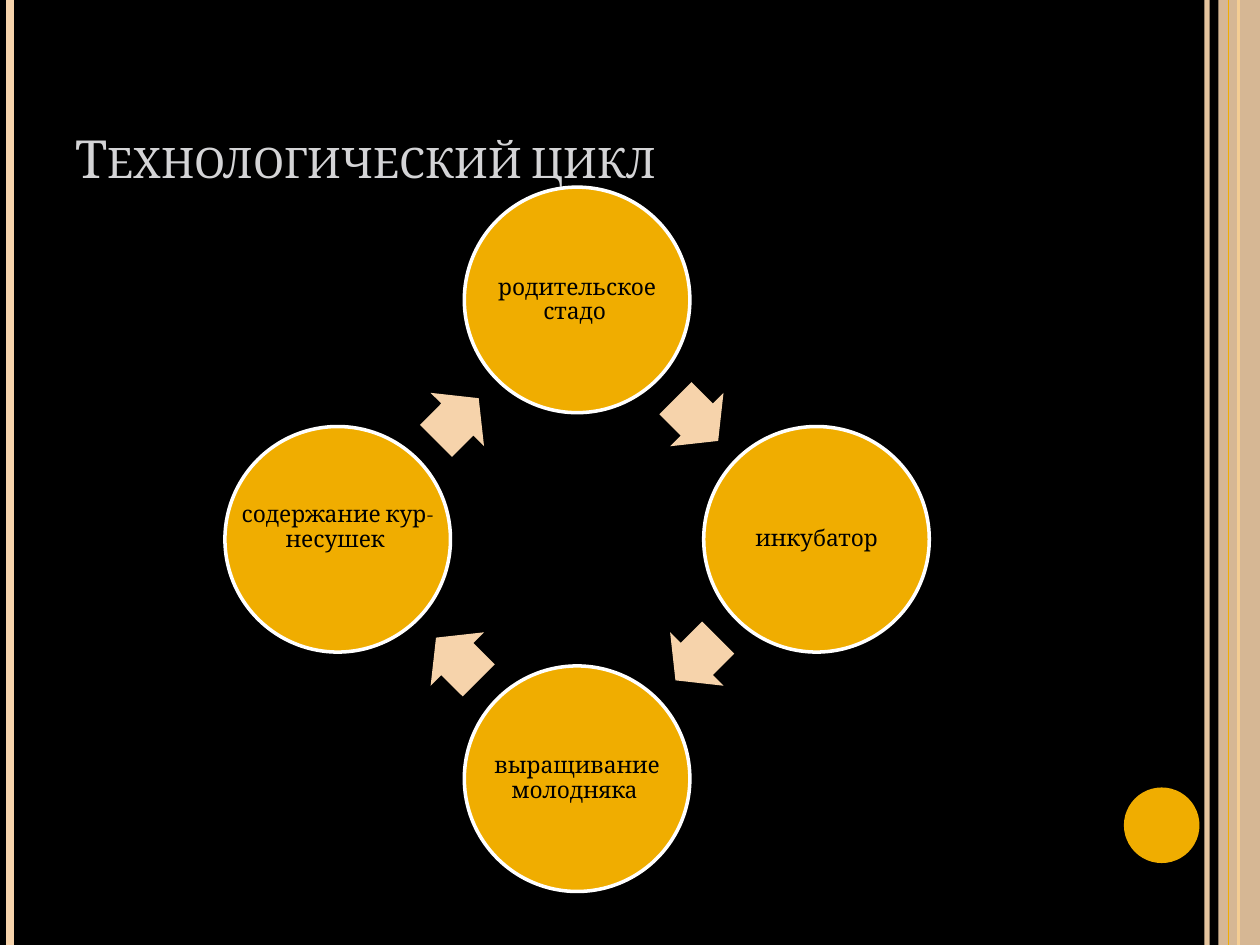
import math

import pptx
import pptx.dml.color
import pptx.enum.shapes
import pptx.enum.text
import pptx.oxml.ns
import pptx.util
from lxml import etree

Inches = pptx.util.Inches
Pt = pptx.util.Pt
Shape = pptx.enum.shapes.MSO_SHAPE
Anchor = pptx.enum.text.MSO_ANCHOR
Align = pptx.enum.text.PP_ALIGN

GOLD, PEACH, WHITE, BLACK, SILVER = "F0AD00", "F6D3AB", "FFFFFF", "000000", "D4D4D6"
HEADING = "Технологический цикл"
STAGES = [
    ("родительское стадо ", 0.02),
    ("инкубатор", 0.02),
    ("выращивание молодняка ", 0.02),
    ("содержание кур-несушек ", 0.21),
]
STRIPES = [
    (9.58, PEACH, 3, 93),
    (0.08, PEACH, 4.5, 100),
    (9.83, GOLD, 1.5, 100),
]
BAND_STRIPE = (9.75, GOLD, 0.75, 100)

CENTER_X, CENTER_Y = 4.58, 4.28
ORBIT = 1.9
STAGE_SIZE = 1.79
ARROW_W, ARROW_H = 0.48, 0.6


def rgb(value):
    return pptx.dml.color.RGBColor.from_string(value)


def set_alpha(element, percent):
    if percent < 100:
        tag = pptx.oxml.ns.qn("a:srgbClr")
        color = next(element.iter(tag))
        etree.SubElement(color, pptx.oxml.ns.qn("a:alpha"), val=str(percent * 1000))


def add_stripe(slide, x, color, width, alpha):
    stripe = slide.shapes.add_connector(
        pptx.enum.shapes.MSO_CONNECTOR.STRAIGHT, Inches(x), 0, Inches(x), Inches(7.5))
    stripe.line.color.rgb = rgb(color)
    stripe.line.width = Pt(width)
    properties = stripe._element.spPr
    set_alpha(properties, alpha)
    etree.SubElement(properties, pptx.oxml.ns.qn("a:effectLst"))


def add_figure(slide, kind, box, fill, outline=None, alpha=100):
    figure = slide.shapes.add_shape(kind, *map(Inches, box))
    figure.shadow.inherit = False
    figure.fill.solid()
    figure.fill.fore_color.rgb = rgb(fill)
    set_alpha(figure._element.spPr, alpha)
    if outline:
        figure.line.color.rgb = rgb(outline)
        figure.line.width = Pt(2)
    else:
        figure.line.fill.background()
    return figure


def add_words(slide, words, box, frame_format, paragraph_format, size, color):
    frame = slide.shapes.add_textbox(*map(Inches, box)).text_frame
    for key, value in frame_format.items():
        setattr(frame, key, value)
    paragraph = frame.paragraphs[0]
    for key, value in paragraph_format.items():
        setattr(paragraph, key, value)
    run = paragraph.add_run()
    run.text = words
    for key, value in {"name": "Cambria", "size": Pt(size)}.items():
        setattr(run.font, key, value)
    run.font.color.rgb = rgb(color)
    return run


def centered(x, y, width, height):
    return x - width / 2, y - height / 2, width, height


def main():
    deck = pptx.Presentation()
    deck.slide_width, deck.slide_height = Inches(10), Inches(7.5)
    slide = deck.slides.add_slide(deck.slide_layouts[6])
    slide.background.fill.solid()
    slide.background.fill.fore_color.rgb = rgb(BLACK)

    for stripe in STRIPES:
        add_stripe(slide, *stripe)
    add_figure(slide, Shape.RECTANGLE, (9.67, 0, 0.33, 7.5), PEACH, alpha=87)
    add_stripe(slide, *BAND_STRIPE)
    add_figure(slide, Shape.OVAL, (8.92, 6.25, 0.6, 0.6), GOLD)

    heading = add_words(
        slide, HEADING, (0.5, 0.3, 8.17, 1.25),
        {"word_wrap": True, "vertical_anchor": Anchor.BOTTOM}, {}, 30, SILVER)
    heading.font._element.set("cap", "small")

    for index, (stage, bottom) in enumerate(STAGES):
        angle = math.radians(90 * index - 90)
        box = centered(CENTER_X + ORBIT * math.cos(angle),
                       CENTER_Y + ORBIT * math.sin(angle), STAGE_SIZE, STAGE_SIZE)
        add_figure(slide, Shape.OVAL, box, GOLD, WHITE)
        inset = Inches(0.02)
        frame_format = {
            "word_wrap": True, "vertical_anchor": Anchor.MIDDLE,
            "margin_left": inset, "margin_right": inset,
            "margin_top": inset, "margin_bottom": Inches(bottom),
        }
        add_words(slide, stage, box, frame_format,
                  {"alignment": Align.CENTER, "line_spacing": 0.9}, 13, BLACK)

        turn = angle + math.pi / 4
        reach = ORBIT / math.sqrt(2)
        arrow = add_figure(
            slide, Shape.RIGHT_ARROW,
            centered(CENTER_X + reach * math.cos(turn),
                     CENTER_Y + reach * math.sin(turn), ARROW_W, ARROW_H), PEACH)
        arrow.adjustments[0], arrow.adjustments[1] = 0.6, 0.5
        arrow.rotation = 45 + 90 * index

    deck.save("out.pptx")


if __name__ == "__main__":
    main()
